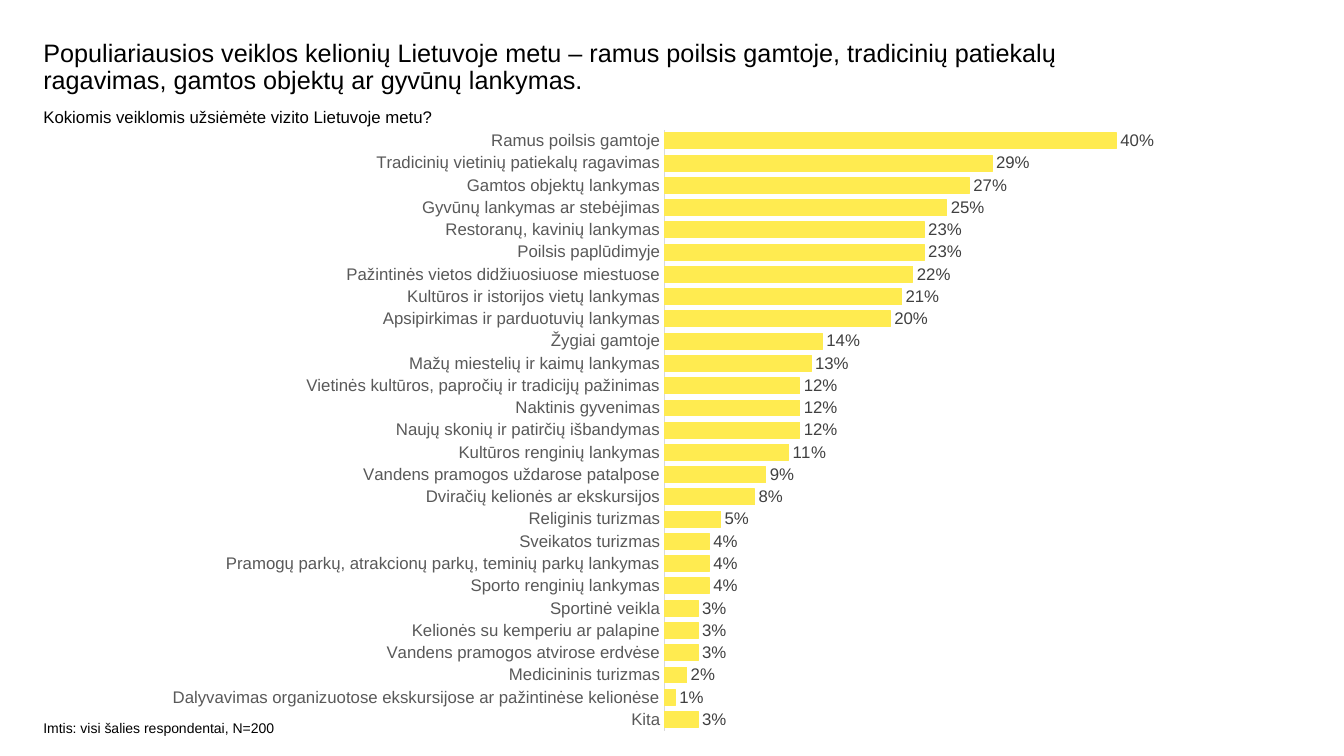
import pptx
import pptx.chart.data
import pptx.dml.color
import pptx.enum.chart
import pptx.enum.text
import pptx.util
from lxml import etree
from pptx.oxml.ns import qn

Inches = pptx.util.Inches
Pt = pptx.util.Pt
RGBColor = pptx.dml.color.RGBColor

FONT = "Arial"
BLACK = RGBColor(0x00, 0x00, 0x00)
LABEL_GREY = RGBColor(0x59, 0x59, 0x59)
VALUE_GREY = RGBColor(0x40, 0x40, 0x40)
AXIS_GREY = RGBColor(0xD9, 0xD9, 0xD9)
YELLOW = RGBColor(0xFF, 0xEB, 0x50)

TITLE = (
    "Populiariausios veiklos kelionių Lietuvoje metu – ramus poilsis gamtoje, "
    "tradicinių patiekalų ragavimas, gamtos objektų ar gyvūnų lankymas."
)
QUESTION = "Kokiomis veiklomis užsiėmėte vizito Lietuvoje metu?"
SAMPLE = "Imtis: visi šalies respondentai, N=200"

ACTIVITIES = [
    ("Ramus poilsis gamtoje", 0.40),
    ("Tradicinių vietinių patiekalų ragavimas", 0.29),
    ("Gamtos objektų lankymas", 0.27),
    ("Gyvūnų lankymas ar stebėjimas", 0.25),
    ("Restoranų, kavinių lankymas", 0.23),
    ("Poilsis paplūdimyje", 0.23),
    ("Pažintinės vietos didžiuosiuose miestuose", 0.22),
    ("Kultūros ir istorijos vietų lankymas", 0.21),
    ("Apsipirkimas ir parduotuvių lankymas", 0.20),
    ("Žygiai gamtoje", 0.14),
    ("Mažų miestelių ir kaimų lankymas", 0.13),
    ("Vietinės kultūros, papročių ir tradicijų pažinimas", 0.12),
    ("Naktinis gyvenimas", 0.12),
    ("Naujų skonių ir patirčių išbandymas", 0.12),
    ("Kultūros renginių lankymas", 0.11),
    ("Vandens pramogos uždarose patalpose", 0.09),
    ("Dviračių kelionės ar ekskursijos", 0.08),
    ("Religinis turizmas", 0.05),
    ("Sveikatos turizmas", 0.04),
    ("Pramogų parkų, atrakcionų parkų, teminių parkų lankymas", 0.04),
    ("Sporto renginių lankymas", 0.04),
    ("Sportinė veikla", 0.03),
    ("Kelionės su kemperiu ar palapine", 0.03),
    ("Vandens pramogos atvirose erdvėse", 0.03),
    ("Medicininis turizmas", 0.02),
    ("Dalyvavimas organizuotose ekskursijose ar pažintinėse kelionėse", 0.01),
    ("Kita", 0.03),
]


def set_font(font, size, color):
    font.name = FONT
    font.size = Pt(size)
    font.color.rgb = color


def write_text(sp, text, size=12, color=BLACK, line_spacing=None):
    tf = sp.text_frame
    tf.word_wrap = True
    tf.auto_size = pptx.enum.text.MSO_AUTO_SIZE.NONE
    tf.vertical_anchor = pptx.enum.text.MSO_ANCHOR.TOP
    tf.margin_left = tf.margin_top = tf.margin_right = tf.margin_bottom = 0
    p = tf.paragraphs[0]
    p.alignment = pptx.enum.text.PP_ALIGN.LEFT
    p.line_spacing = line_spacing
    r = p.add_run()
    r.text = text
    set_font(r.font, size, color)


def add_title(s, left, top, width, height):
    sp = s.shapes.title
    sp.left, sp.top = Inches(left), Inches(top)
    sp.width, sp.height = Inches(width), Inches(height)
    write_text(sp, TITLE, size=18, line_spacing=0.9)


def add_note(s, text, left, top, width, height, **text_format):
    sp = s.shapes.add_textbox(Inches(left), Inches(top), Inches(width), Inches(height))
    write_text(sp, text, **text_format)


def set_plot_layout(chart, **fractions):
    plot_area = chart.plots[0]._element.getparent()
    layout = plot_area.find(qn("c:layout"))
    if layout is None:
        layout = etree.Element(qn("c:layout"))
        plot_area.insert(0, layout)
    manual = etree.SubElement(layout, qn("c:manualLayout"))
    settings = {"layoutTarget": "inner", "xMode": "edge", "yMode": "edge", **fractions}
    for name, value in settings.items():
        etree.SubElement(manual, qn("c:" + name)).set("val", str(value))


def add_activity_chart(s, left, top, width, height):
    data = pptx.chart.data.CategoryChartData(number_format="0%")
    names, shares = zip(*reversed(ACTIVITIES))
    data.categories = names
    data.add_series("Series 1", shares)
    chart = s.shapes.add_chart(
        pptx.enum.chart.XL_CHART_TYPE.BAR_CLUSTERED,
        Inches(left), Inches(top), Inches(width), Inches(height), data,
    ).chart
    chart.has_title = False
    chart.has_legend = False
    set_font(chart.font, 10, BLACK)
    set_plot_layout(chart, x=0.493, y=0.019, w=0.489, h=0.96)

    axis = chart.category_axis
    axis.major_tick_mark = axis.minor_tick_mark = pptx.enum.chart.XL_TICK_MARK.NONE
    axis.format.line.color.rgb = AXIS_GREY
    axis.format.line.width = Pt(0.75)
    set_font(axis.tick_labels.font, 12, LABEL_GREY)

    axis = chart.value_axis
    axis.visible = False
    axis.has_major_gridlines = False
    axis.minimum_scale = 0
    axis.maximum_scale = 0.45

    plot = chart.plots[0]
    plot.gap_width = 40
    plot.vary_by_categories = False
    bars = plot.series[0].format
    bars.fill.solid()
    bars.fill.fore_color.rgb = YELLOW
    bars.line.color.rgb = YELLOW
    bars.line.width = Pt(0.75)

    plot.has_data_labels = True
    labels = plot.data_labels
    labels.show_value = True
    labels.position = pptx.enum.chart.XL_LABEL_POSITION.OUTSIDE_END
    labels.number_format = "0%"
    labels.number_format_is_linked = False
    set_font(labels.font, 12, VALUE_GREY)


def main():
    prs = pptx.Presentation()
    prs.slide_width, prs.slide_height = Inches(13.33), Inches(7.5)
    s = prs.slides.add_slide(prs.slide_layouts[5])
    margin = 0.43
    add_title(s, margin, 0.4, 11.25, 0.6)
    add_note(s, QUESTION, margin, 1.06, 11.89, 0.61)
    add_note(s, SAMPLE, margin, 7.14, 2.53, 0.24, size=10)
    add_activity_chart(s, 1.5, 1.17, 10.32, 6.21)
    prs.save("out.pptx")


if __name__ == "__main__":
    main()
